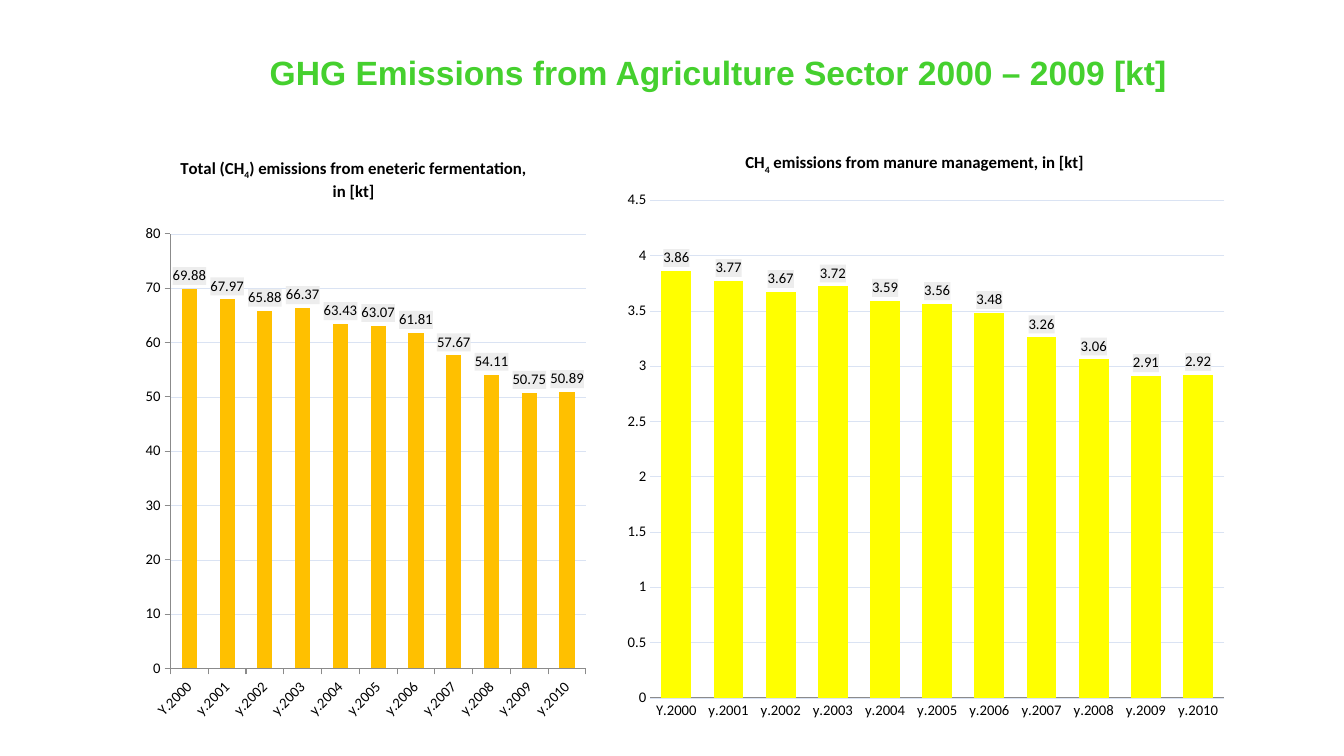
"""Builds a slide with two column charts of methane emissions from agriculture."""
import lxml.etree
import pptx
import pptx.chart.data
import pptx.dml.color
import pptx.enum.chart
import pptx.enum.text
import pptx.oxml
import pptx.oxml.ns
import pptx.util

Pt = pptx.util.Pt
qn = pptx.oxml.ns.qn
Tick = pptx.enum.chart.XL_TICK_MARK

HEADING = "GHG Emissions from Agriculture Sector 2000 – 2009 [kt]"
YEARS = ["Y.2000"] + [f"y.{year}" for year in range(2001, 2011)]
EMISSIONS = [
    {
        "title": ["Total (CH", "4", ") emissions from eneteric fermentation, in [kt]"],
        "values": [69.88, 67.97, 65.88, 66.37, 63.43, 63.07, 61.81, 57.67, 54.11, 50.75, 50.89],
        "color": "FFC000", "box": (97.2, 99.4, 327.6, 423.4),
        "title_at": (0.09, 0.025), "plot_at": (0.075, 0.16, 0.906, 0.733),
        "scale": (80, 10), "gap": 150, "tick": Tick.OUTSIDE, "turn": -45,
    },
    {
        "title": ["CH", "4", " emissions from manure management, in [kt]"],
        "values": [3.86, 3.77, 3.67, 3.72, 3.59, 3.56, 3.48, 3.26, 3.06, 2.91, 2.92],
        "color": "FFFF00", "box": (439.2, 90.7, 444.2, 432),
        "title_at": (0.205, 0.035), "plot_at": (0.057, 0.121, 0.923, 0.823),
        "scale": (4.5, 0.5), "gap": 75, "tick": Tick.NONE, "turn": 0,
    },
]


def paint(color_format, color):
    color_format.rgb = pptx.dml.color.RGBColor.from_string(color)


def style(font, size, color, name, bold=False):
    font.size, font.name, font.bold = Pt(size), name, bold
    paint(font.color, color)


def place(element, index, fractions, inner=False):
    for old in element.findall(qn("c:layout")):
        element.remove(old)
    layout = lxml.etree.Element(qn("c:layout"))
    manual = lxml.etree.SubElement(layout, qn("c:manualLayout"))
    settings = [("layoutTarget", "inner")] if inner else []
    settings += [("xMode", "edge"), ("yMode", "edge")]
    settings += zip("xywh", fractions)
    for tag, value in settings:
        lxml.etree.SubElement(manual, qn(f"c:{tag}")).set("val", str(value))
    element.insert(index, layout)


def add_title(chart, runs, corner):
    chart.has_title = True
    paragraph = chart.chart_title.text_frame.paragraphs[0]
    for position, text in enumerate(runs):
        run = paragraph.add_run()
        run.text = text
        style(run.font, 12, "000000", "Calibri", True)
        if position == 1:
            run.font._element.set("baseline", "-25000")
    place(chart.chart_title._element, 1, corner)


def style_axes(chart, emission):
    years, amounts = chart.category_axis, chart.value_axis
    for axis in (years, amounts):
        axis.major_tick_mark = emission["tick"]
        axis.minor_tick_mark = Tick.NONE
        style(axis.tick_labels.font, 10.5, "000000", "Calibri")
        paint_line(axis.format.line, "8B8B8B", 0.75)
    years.has_major_gridlines = False
    turn = str(emission["turn"] * 60000)
    years._element.find(qn("c:txPr")).find(qn("a:bodyPr")).set("rot", turn)
    amounts.minimum_scale = 0
    amounts.maximum_scale, amounts.major_unit = emission["scale"]
    amounts.tick_labels.number_format = "General"
    amounts.tick_labels.number_format_is_linked = False
    paint_line(amounts.major_gridlines.format.line, "DAE3F3", 0.25)
    if emission["tick"] == Tick.NONE:
        amounts.format.line.fill.background()


def paint_line(line, color, width):
    paint_fill(line.fill, color)
    line.width = Pt(width)


def paint_fill(fill, color):
    fill.solid()
    paint(fill.fore_color, color)


def add_labels(columns):
    columns.has_data_labels = True
    labels = columns.data_labels
    labels.show_value = True
    labels.number_format = "#,##0.00"
    labels.number_format_is_linked = False
    labels.position = pptx.enum.chart.XL_LABEL_POSITION.OUTSIDE_END
    style(labels.font, 10.5, "000000", "Calibri")
    backdrop = lxml.etree.Element(qn("c:spPr"))
    fill = lxml.etree.SubElement(backdrop, qn("a:solidFill"))
    lxml.etree.SubElement(fill, qn("a:srgbClr")).set("val", "EDEDED")
    labels._element.find(qn("c:txPr")).addprevious(backdrop)


def add_emissions(slide, emission):
    data = pptx.chart.data.CategoryChartData(number_format="#,##0.00")
    data.categories = YEARS
    data.add_series("Series 1", emission["values"])
    kind = pptx.enum.chart.XL_CHART_TYPE.COLUMN_CLUSTERED
    chart = slide.shapes.add_chart(kind, *map(Pt, emission["box"]), data).chart
    style(chart.font, 10.5, "000000", "Calibri")
    chart.has_legend = False
    add_title(chart, emission["title"], emission["title_at"])
    style_axes(chart, emission)
    columns = chart.plots[0]
    columns.gap_width = emission["gap"]
    columns.vary_by_categories = False
    paint_fill(columns.series[0].format.fill, emission["color"])
    add_labels(columns)
    place(chart._chartSpace.chart.plotArea, 0, emission["plot_at"], True)


def add_heading(slide):
    frame = slide.shapes.add_textbox(Pt(0), Pt(21.6), Pt(960), Pt(48.2)).text_frame
    frame.word_wrap = True
    frame.vertical_anchor = pptx.enum.text.MSO_ANCHOR.BOTTOM
    paragraph = frame.paragraphs[0]
    paragraph.alignment = pptx.enum.text.PP_ALIGN.CENTER
    paragraph._p.get_or_add_pPr().set("marL", str(Pt(66)))
    run = paragraph.add_run()
    run.text = HEADING
    style(run.font, 24, "45D02E", "Arial", True)


def main():
    deck = pptx.Presentation()
    deck.slide_width, deck.slide_height = Pt(960), Pt(540)
    slide = deck.slides.add_slide(deck.slide_layouts[6])
    for emission in EMISSIONS:
        add_emissions(slide, emission)
    add_heading(slide)
    deck.save("out.pptx")


if __name__ == "__main__":
    main()
